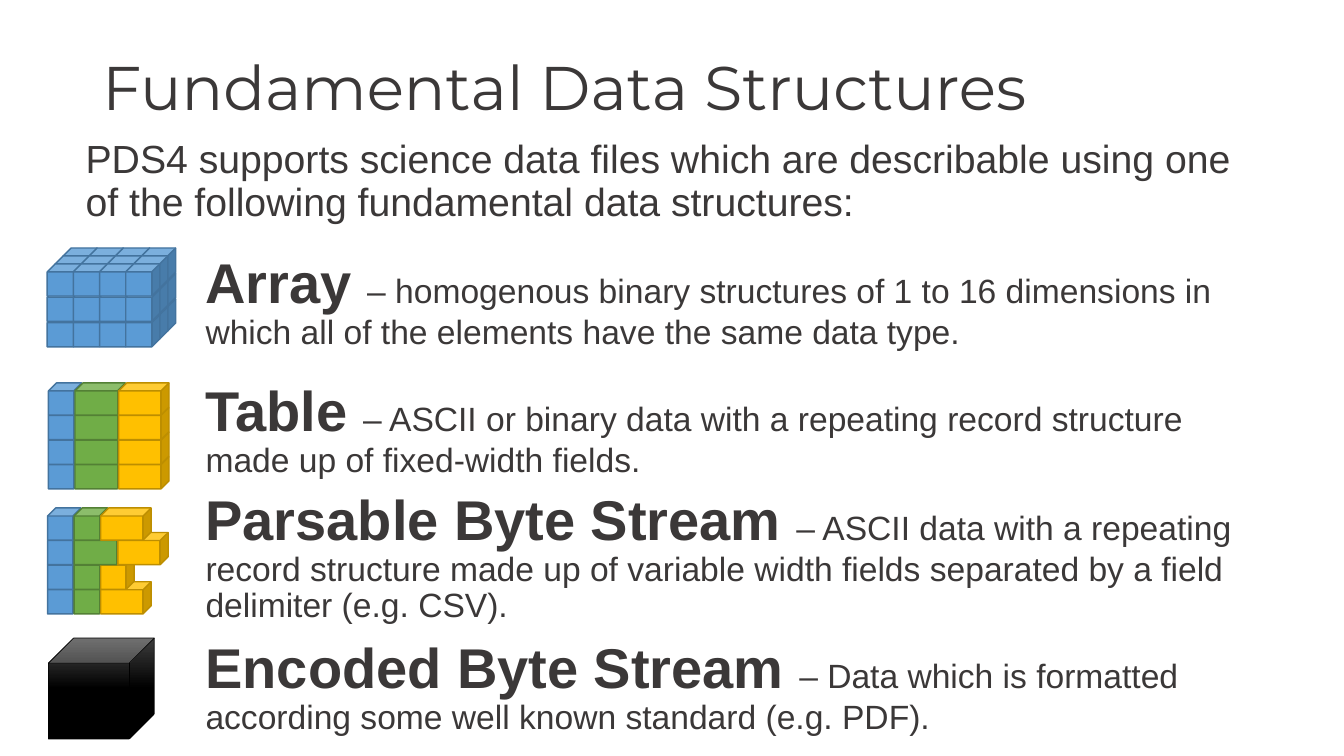
from pptx import Presentation
from pptx.dml.color import RGBColor
from pptx.enum.shapes import MSO_SHAPE
from pptx.enum.text import MSO_ANCHOR
from pptx.util import Cm, Pt

CUBE = MSO_SHAPE.CUBE
MIDDLE, TOP = MSO_ANCHOR.MIDDLE, MSO_ANCHOR.TOP

COLORS = {
    "text": "3B3838",
    "blue": "5B9BD5", "blue line": "43739E",
    "green": "70AD47", "green line": "538035",
    "gold": "FFC000", "gold line": "BD8E00",
    "black": "000000", "gray": "4B4B4B",
}

TITLE = "Fundamental Data Structures"
INTRO = ("PDS4 supports science data files which are describable using one "
         "of the following fundamental data structures:")
STRUCTURES = [
    ("Array ", "– homogenous binary structures of 1 to 16 dimensions in which "
     "all of the elements have the same data type.", 6.3, 2.82),
    ("Table ", "– ASCII or binary data with a repeating record structure made "
     "up of fixed-width fields.", 9.53, 2.82),
    ("Parsable Byte Stream ", "– ASCII data with a repeating record structure "
     "made up of variable width fields separated by a field delimiter "
     "(e.g. CSV).", 12.27, 3.71),
    ("Encoded Byte Stream ", "– Data which is formatted according some well "
     "known standard (e.g. PDF).", 16, 2.74),
]

CELL, NARROW, WIDE = 0.86, 0.84, 1.27
CELL_HEIGHT = 0.81
ARRAY_RECORDS = [(CELL,) * 4] * 3
TABLE_RECORDS = [(NARROW, WIDE, WIDE)] * 4
STREAM_RECORDS = [
    (NARROW, NARROW, WIDE),
    (NARROW, WIDE, WIDE),
    (NARROW, NARROW, NARROW),
    (NARROW, NARROW, WIDE),
]
ARRAY_FIELDS = ["blue"] * 4
RECORD_FIELDS = ["blue", "green", "gold"]
ARRAY_LAYERS = 3
LAYER_SHIFT = 0.2


def rgb(name):
    return RGBColor.from_string(COLORS[name])


def add_text(page, runs, left, top, width, height, font="Arial",
             anchor=TOP, space_before=10):
    box = page.shapes.add_textbox(Cm(left), Cm(top), Cm(width), Cm(height))
    frame = box.text_frame
    frame.word_wrap = True
    frame.vertical_anchor = anchor
    para = frame.paragraphs[0]
    para.line_spacing = 0.9
    para.space_before = Pt(space_before)
    para.font.name = font
    para.font.color.rgb = rgb("text")
    for text, size, bold in runs:
        span = para.add_run()
        span.text = text
        span.font.size = Pt(size)
        span.font.bold = bold


def add_cube(shapes, left, top, width, height, line, line_width):
    cube = shapes.add_shape(CUBE, Cm(left), Cm(top), Cm(width), Cm(height))
    cube.shadow.inherit = False
    cube.line.color.rgb = rgb(line)
    cube.line.width = Pt(line_width)
    return cube


def add_records(group, records, fields, left, top, row_step, overlap):
    for row in reversed(range(len(records))):
        cell_left = left
        for width, color in zip(records[row], fields):
            cube = add_cube(group.shapes, cell_left, top + row * row_step,
                            width, CELL_HEIGHT, color + " line", 1)
            cube.fill.solid()
            cube.fill.fore_color.rgb = rgb(color)
            cell_left += width - overlap


def main():
    deck = Presentation()
    deck.slide_width, deck.slide_height = Cm(33.87), Cm(19.05)
    page = deck.slides.add_slide(deck.slide_layouts[6])

    add_text(page, [(TITLE, 44, False)], 2.33, 1.01, 29.21, 2.54,
             "Montserrat", MIDDLE, 0)
    add_text(page, [(INTRO, 28, False)], 1.91, 3.4, 29.36, 2.46)
    for name, description, top, height in STRUCTURES:
        add_text(page, [(name, 40, True), (description, 24, False)],
                 4.93, top, 26.62, height)

    array = page.shapes.add_group_shape()
    for layer in range(ARRAY_LAYERS):
        shift = layer * LAYER_SHIFT
        add_records(array, ARRAY_RECORDS, ARRAY_FIELDS,
                    1.59 - shift, 6.25 + shift, 0.64, 0.2)
    for records, left, top in [(TABLE_RECORDS, 1.22, 9.65),
                               (STREAM_RECORDS, 1.2, 12.8)]:
        add_records(page.shapes.add_group_shape(), records, RECORD_FIELDS,
                    left, top, 0.62, 0.17)

    encoded = add_cube(page.shapes, 1.22, 16.08, 2.67, 2.54, "black", 0.5)
    encoded.fill.gradient()
    encoded.fill.gradient_angle = 270
    for stop, color, position in zip(encoded.fill.gradient_stops,
                                     ["gray", "black"], [0, 0.5]):
        stop.color.rgb = rgb(color)
        stop.position = position

    deck.save("out.pptx")


if __name__ == "__main__":
    main()
